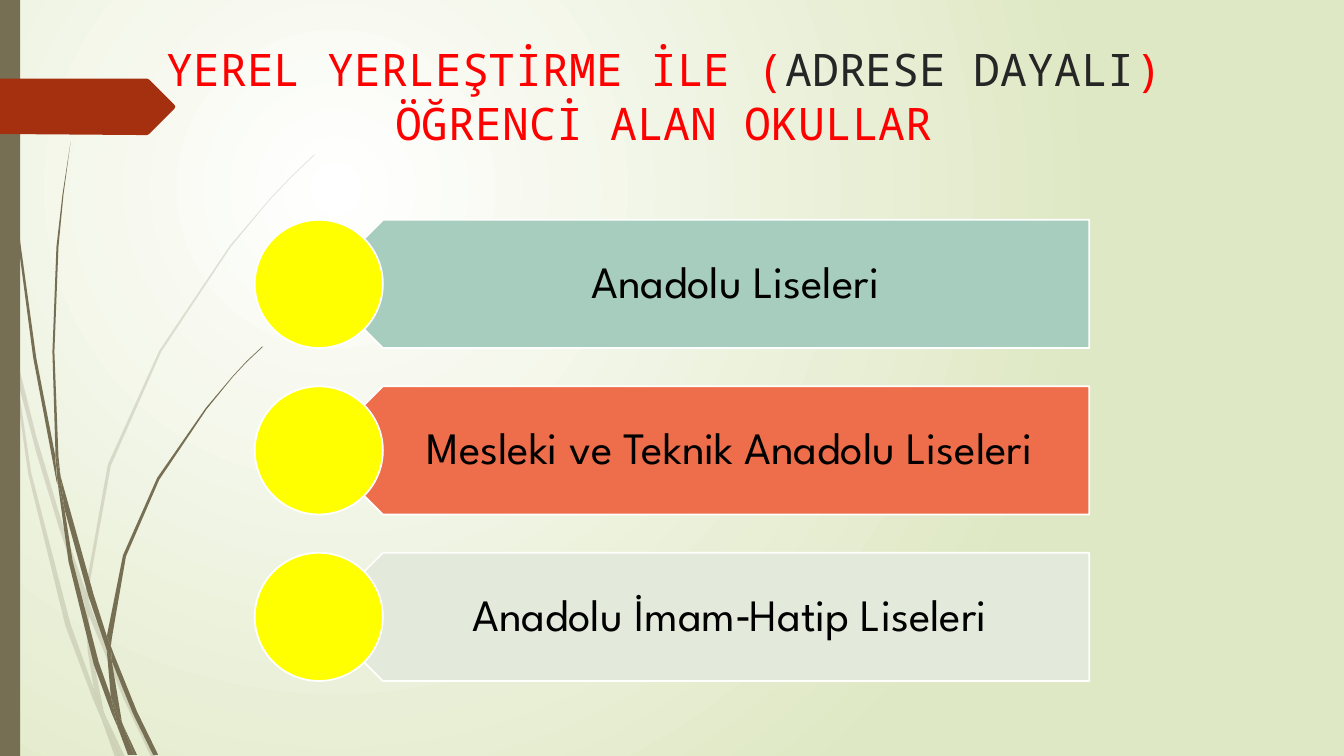
from lxml.etree import SubElement
from pptx import Presentation
from pptx.dml.color import RGBColor
from pptx.enum.shapes import MSO_SHAPE
from pptx.enum.text import MSO_ANCHOR, PP_ALIGN
from pptx.oxml.ns import qn
from pptx.util import Cm, Pt

WIDTH, HEIGHT = 33.87, 19.05
INCH = 2.54  # the leaf outlines are plotted in inches

COLORS = {
    "white": "FFFFFF", "pale": "DFE8C4", "olive": "766F54", "rust": "A53010",
    "red": "FF0000", "dark": "262626", "black": "000000", "yellow": "FFFF00",
    "mint": "A6CDBD", "coral": "EE6E4B", "mist": "E3E9DB",
}

LIGHT = [
    [(.11, 3.5), (.09, 3.22), (0, 2.82), (0, 2.99), (.1, 3.44)],
    [(.58, 5.22), (.84, 5.99), (.85, 5.86), (.62, 5.2), (.36, 4.33), (.14, 3.45),
     (.17, 3.76), (.36, 4.49)],
    [(.92, 6.07), (.88, 5.96), (.88, 6.1), (1.23, 6.94), (1.5, 7.51), (1.55, 7.51),
     (1.27, 6.92)],
    [(1.19, 7.51), (1.24, 7.51), (1.05, 7.11)],
    [(.93, 6.83), (.7, 6.19), (.31, 4.69), (.17, 3.76), (.11, 3.5), (.28, 4.7),
     (.65, 6.21), (.92, 6.93), (1.01, 7.14), (.99, 7.07)],
    [(.84, 5.99), (.87, 6.46), (.93, 6.83), (.96, 6.92), (1.05, 7.11), (1.03, 7.06),
     (.91, 6.46), (.88, 6.1), (.88, 6.08)],
    [(.88, 5.84), (1.1, 4.62), (1.6, 3.49), (2.29, 2.45), (2.68, 1.98), (2.9, 1.75),
     (3.12, 1.54), (3.12, 1.53), (2.89, 1.75), (2.68, 1.97), (2.28, 2.44),
     (1.58, 3.48), (1.07, 4.61), (.85, 5.84), (.85, 5.86), (.88, 5.96)],
    [(1.01, 7.14), (1.14, 7.51), (1.19, 7.51)],
    [(.88, 6.08), (.88, 6.1), (.88, 5.96), (.85, 5.86), (.84, 5.99)],
    [(.96, 6.92), (.93, 6.83), (.99, 7.07), (1.01, 7.14), (1.19, 7.51), (1.05, 7.11)],
]
DARK = [
    [(.07, 1.1), (.17, 2.33), (.33, 3.55), (.56, 4.77), (.57, 4.81), (.55, 4.57),
     (.55, 4.53), (.36, 3.55), (.19, 2.32), (.08, 1.09), (.05, .48), (.04, 0),
     (.03, 0), (.04, .48)],
    [(.88, 5.92), (1.06, 6.45), (1.06, 6.33), (1.06, 6.31), (.93, 5.9), (.6, 4.72),
     (.64, 5.05)],
    [(1.13, 6.49), (1.1, 6.41), (1.11, 6.56), (1.32, 7.08), (1.52, 7.49), (1.57, 7.49),
     (1.36, 7.06)],
    [(1.1, 6.91), (.98, 6.57), (.72, 5.56), (.64, 5.05), (.57, 4.77), (.68, 5.57),
     (.93, 6.59), (1.11, 7.08), (1.17, 7.22), (1.16, 7.17)],
    [(.6, 4.72), (.58, 4.53), (.54, 3.49), (.58, 2.45), (.63, 1.93), (.7, 1.41),
     (.62, 1.93), (.56, 2.45), (.52, 3.49), (.55, 4.49)],
    [(1.33, 7.49), (1.36, 7.49), (1.22, 7.19)],
    [(.57, 4.77), (.64, 5.05), (.6, 4.72), (.55, 4.49), (.55, 4.53)],
    [(1.11, 6.33), (1.25, 5.52), (1.58, 4.76), (2.05, 4.06), (2.31, 3.74), (2.45, 3.59),
     (2.61, 3.44), (2.6, 3.44), (2.45, 3.58), (2.31, 3.73), (2.04, 4.05),
     (1.56, 4.74), (1.22, 5.51), (1.06, 6.31), (1.1, 6.41)],
    [(1.17, 7.22), (1.27, 7.49), (1.31, 7.49)],
    [(1.06, 6.45), (1.1, 6.91), (1.16, 7.06), (1.22, 7.19), (1.21, 7.16), (1.11, 6.56),
     (1.09, 6.51)],
    [(1.06, 6.45), (1.09, 6.51), (1.11, 6.56), (1.1, 6.41), (1.06, 6.31), (1.06, 6.33)],
    [(1.16, 7.06), (1.1, 6.91), (1.16, 7.17), (1.17, 7.22), (1.3, 7.49), (1.33, 7.49),
     (1.22, 7.19)],
]
TAB = [(1.73, 1.08), (1.48, 1.33), (1.46, 1.34), (1.36, 1.34), (0, 1.33), (0, .78),
       (1.36, .78), (1.46, .78), (1.48, .79), (1.73, 1.04), (1.74, 1.06)]


def rgb(name):
    return RGBColor.from_string(COLORS[name])


def paint(shape, fill, line=None):
    shape.shadow.inherit = False
    shape.fill.solid()
    shape.fill.fore_color.rgb = rgb(fill)
    if line:
        shape.line.color.rgb = rgb(line)
        shape.line.width = Pt(1.25)
    else:
        shape.line.fill.background()
    return shape


def add_form(slide, kind, box, fill, line=None):
    shape = slide.shapes.add_shape(kind, *map(Cm, box))
    return paint(shape, fill, line)


def add_path(slide, origin, points, fill, alpha=None):
    """Draw a closed outline, plotted in inches from the origin."""
    left, top = origin
    points = [(Cm(left + x * INCH), Cm(top + y * INCH)) for x, y in points]
    pen = slide.shapes.build_freeform(*points[0])
    pen.add_line_segments(points[1:])
    shape = paint(pen.convert_to_shape(), fill)
    if alpha:
        color = shape.element.spPr.find(".//" + qn("a:srgbClr"))
        SubElement(color, qn("a:alpha"), val=str(alpha * 1000))


def add_text(slide, box, anchor, margins=(.25, .13, .25, .13)):
    """Place an empty centred text box; give back its paragraph."""
    frame = slide.shapes.add_textbox(*map(Cm, box)).text_frame
    frame.word_wrap = True
    frame.vertical_anchor = anchor
    (frame.margin_left, frame.margin_top,
     frame.margin_right, frame.margin_bottom) = map(Cm, margins)
    para = frame.paragraphs[0]
    para.alignment = PP_ALIGN.CENTER
    return para


def add_run(para, text, font, color):
    run = para.add_run()
    run.text = text
    run.font.name = font
    run.font.size = Pt(32)
    run.font.color.rgb = rgb(color)


def add_back(slide):
    """Fill the background with a glow around the upper left."""
    fill = slide.background.fill
    fill.gradient()
    for stop, name in zip(fill.gradient_stops, ("white", "pale")):
        stop.color.rgb = rgb(name)
    grad = slide.element.find(".//" + qn("a:gradFill"))
    grad.remove(grad.find(qn("a:lin")))
    glow = SubElement(grad, qn("a:path"), {"path": "circle"})
    SubElement(glow, qn("a:fillToRect"), l="50000", t="50000", r="100000", b="100000")


def add_edge(slide, box):
    """Draw the leaves, the side bar and the red tab."""
    origin = box[:2]
    for leaf in LIGHT:
        add_path(slide, origin, leaf, "olive", alpha=20)
    for leaf in DARK:
        add_path(slide, origin, leaf, "olive")
    add_form(slide, MSO_SHAPE.RECTANGLE, box, "olive")
    add_path(slide, origin, TAB, "rust")


def add_title(slide, box):
    para = add_text(slide, box, MSO_ANCHOR.TOP)
    font = "Noto Sans Mono"
    add_run(para, "YEREL YERLEŞTİRME İLE (", font, "red")
    add_run(para, "ADRESE DAYALI", font, "dark")
    add_run(para, ")", font, "red")
    para.add_line_break()
    add_run(para, "ÖĞRENCİ ALAN OKULLAR", font, "red")


def add_school(slide, box, name, fill):
    """Draw a disc with a banner that points at it."""
    left, top, width, size = box
    start = left + size / 2
    banner = add_form(slide, MSO_SHAPE.PENTAGON,
                      (start, top, width - size / 2, size), fill, "white")
    banner.rotation = 180
    inner = start + size / 4
    para = add_text(slide, (inner, top, left + width - inner, size),
                    MSO_ANCHOR.MIDDLE, (1.42, .33, .64, .33))
    para.line_spacing = .9
    add_run(para, name, "League Spartan", "black")
    add_form(slide, MSO_SHAPE.OVAL, (left, top, size, size), "yellow", "white")


def add_list(slide, box):
    left, top, width, height = box
    schools = [
        ("Anadolu Liseleri", "mint"),
        ("Mesleki ve Teknik Anadolu Liseleri ", "coral"),
        ("Anadolu İmam‐Hatip Liseleri ", "mist"),
    ]
    size = 3.23
    pitch = (height - size) / (len(schools) - 1)
    for i, (name, fill) in enumerate(schools):
        add_school(slide, (left, top + i * pitch, width, size), name, fill)


def main():
    deck = Presentation()
    deck.slide_width, deck.slide_height = Cm(WIDTH), Cm(HEIGHT)
    slide = deck.slides.add_slide(deck.slide_layouts[6])
    add_back(slide)
    add_edge(slide, (0, 0, .51, HEIGHT))
    add_title(slide, (.79, .93, 31.9, 3.68))
    add_list(slide, (6.42, 5.54, 21.03, 11.62))
    deck.save("out.pptx")


if __name__ == "__main__":
    main()
